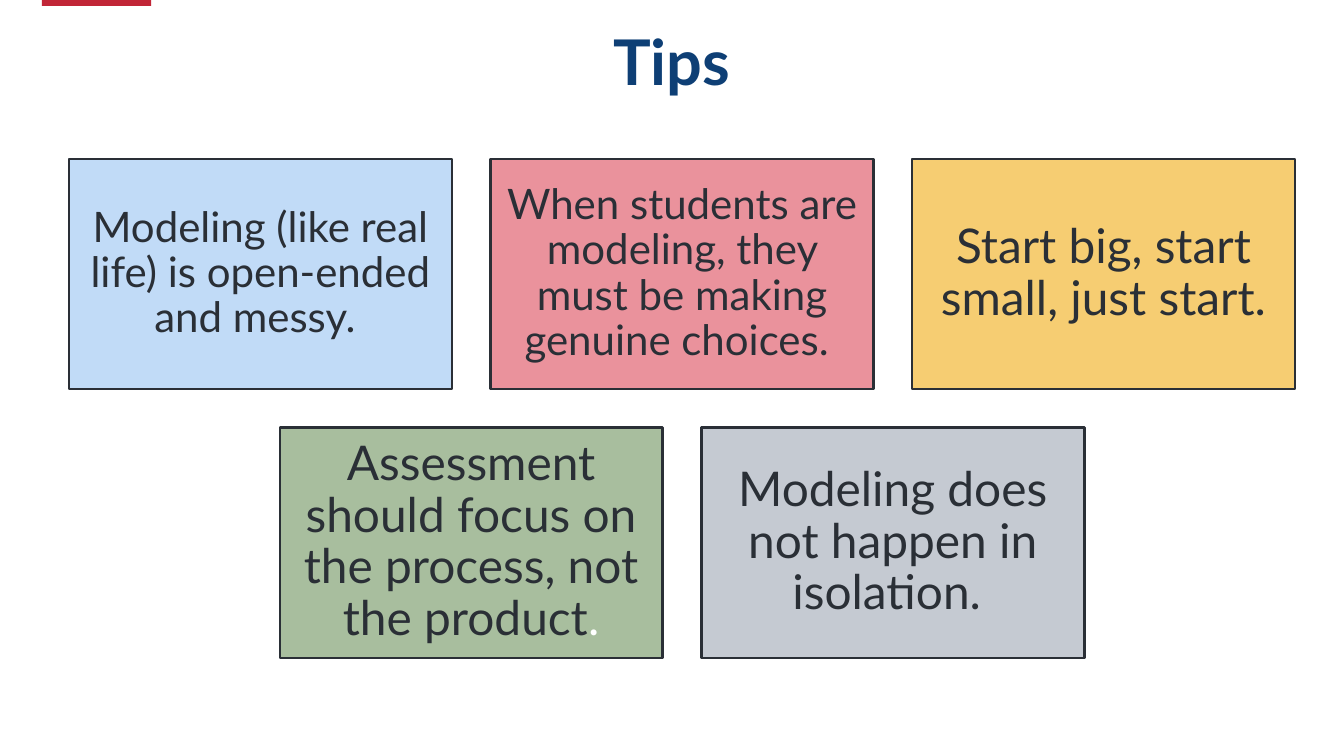
from pptx import Presentation
from pptx.dml.color import RGBColor
from pptx.enum.shapes import MSO_SHAPE
from pptx.enum.text import MSO_ANCHOR, PP_ALIGN
from pptx.util import Inches, Pt

RECTANGLE = MSO_SHAPE.RECTANGLE
MIDDLE = MSO_ANCHOR.MIDDLE
CENTER = PP_ALIGN.CENTER

FONT = "Lato"
INK, NAVY, RED, WHITE = "2A2F36", "0E3F75", "C12637", "FFFFFF"

TITLE = "Tips"
# Each tip: fill, text size, inset, runs of (text, colour)
TIP_ROWS = [
    [
        ("C1DBF7", 36, 0.15, [("Modeling (like real life) is open-ended and messy. ", INK)]),
        ("EA929C", 36, 0.15, [("When students are modeling, they must be making genuine choices. ", INK)]),
        ("F6CD72", 41, 0.17, [("Start big, start small, just start.", INK)]),
    ],
    [
        ("A8BE9E", 41, 0.17, [("Assessment should focus on the process, not the product", INK),
                              (".", WHITE)]),
        ("C5CAD2", 41, 0.17, [("Modeling does not happen in isolation. ", INK)]),
    ],
]

CARD_W, CARD_H, GAP = 4.56, 2.74, 0.46
CARDS_TOP, CARDS_CENTER = 1.89, 8.12


def rgb(color):
    return RGBColor.from_string(color)


def add_block(slide, left, top, width, height, fill):
    block = slide.shapes.add_shape(
        RECTANGLE, Inches(left), Inches(top), Inches(width), Inches(height))
    block.shadow.inherit = False
    block.fill.solid()
    block.fill.fore_color.rgb = rgb(fill)
    block.line.fill.background()
    return block


def write(frame, runs, size, inset_x, inset_y, bold=False):
    """Fill a text frame with one centred paragraph of (text, colour) runs."""
    frame.word_wrap = True
    frame.margin_left = frame.margin_right = Inches(inset_x)
    frame.margin_top = frame.margin_bottom = Inches(inset_y)
    paragraph = frame.paragraphs[0]
    paragraph.alignment = CENTER
    paragraph.line_spacing = 0.9
    for text, color in runs:
        run = paragraph.add_run()
        run.text = text
        run.font.name = FONT
        run.font.size = Pt(size)
        run.font.bold = bold
        run.font.color.rgb = rgb(color)


def add_card(slide, left, top, tip):
    fill, size, inset, runs = tip
    card = add_block(slide, left, top, CARD_W, CARD_H, fill)
    card.line.color.rgb = rgb(INK)
    card.line.width = Pt(2)
    card.text_frame.vertical_anchor = MIDDLE
    write(card.text_frame, runs, size, inset, inset)


def main():
    deck = Presentation()
    deck.slide_width, deck.slide_height = Inches(16), Inches(9)
    slide = deck.slides.add_slide(deck.slide_layouts[6])

    add_block(slide, 0.5, 0, 1.3, 0.07, RED)
    title = slide.shapes.add_textbox(Inches(2.6), Inches(0.31), Inches(10.8), Inches(1.06))
    write(title.text_frame, [(TITLE, NAVY)], 54, 0.12, 0.06, bold=True)

    for row, tips in enumerate(TIP_ROWS):
        row_width = len(tips) * (CARD_W + GAP) - GAP
        top = CARDS_TOP + row * (CARD_H + GAP)
        for column, tip in enumerate(tips):
            left = CARDS_CENTER - row_width / 2 + column * (CARD_W + GAP)
            add_card(slide, left, top, tip)

    deck.save("out.pptx")


if __name__ == "__main__":
    main()
